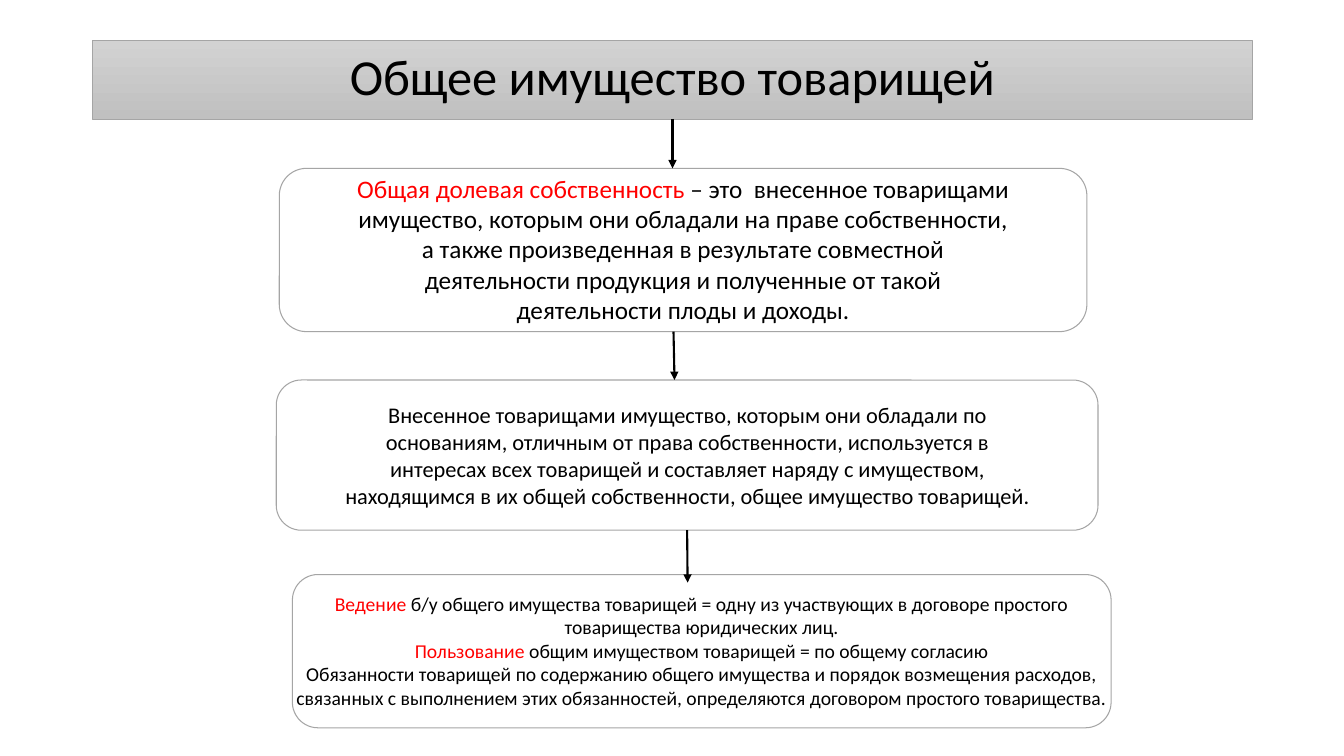
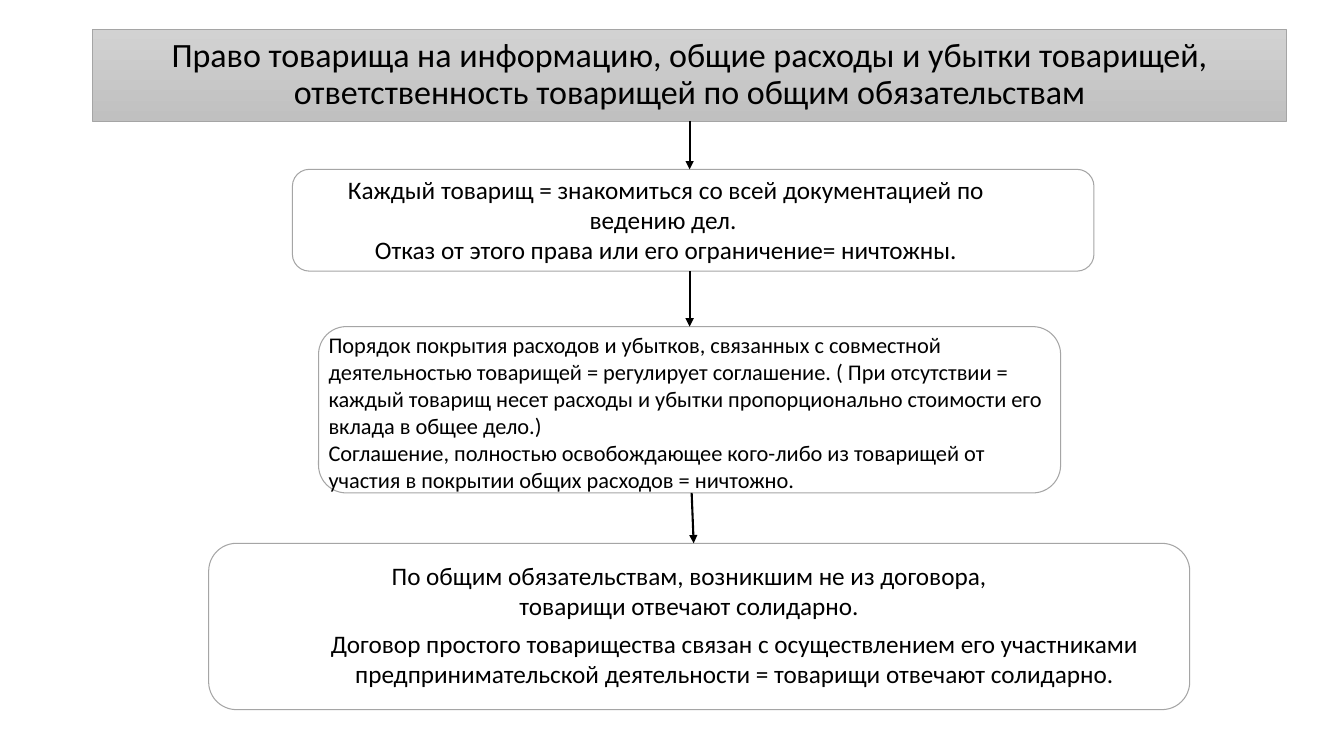
from pptx import Presentation
from pptx import util as u
from pptx.dml.color import RGBColor
from pptx.enum import shapes, text
from pptx.oxml.ns import qn
from lxml import etree

# Content: boxes are left, top, width, height in inches; *red* marks key words
DECK = [
    {
        "title": ("Общее имущество товарищей", 36, (0.92, 0.4, 11.5, 0.78)),
        "frames": [(2.77, 1.67, 8.01, 1.62), (2.74, 3.77, 8.15, 1.49),
                   (2.9, 5.7, 8.12, 1.52)],
        "arrows": [(6.67, 6.67, 1.67), (6.68, 6.69, 3.77), (6.82, 6.82, 5.78)],
        "texts": [
            ((3.44, 1.67, 6.67, 1.62), 18, "CENTER", [
                "*Общая долевая собственность *– это  внесенное товарищами "
                "имущество, которым они обладали на праве собственности, а "
                "также произведенная в результате совместной деятельности "
                "продукция и полученные от такой деятельности плоды и доходы."]),
            ((3.29, 3.93, 7.06, 1.18), 16, "CENTER", [
                "Внесенное товарищами имущество, которым они обладали по "
                "основаниям, отличным от права собственности, используется в "
                "интересах всех товарищей и составляет наряду с имуществом, "
                "находящимся в их общей собственности, общее имущество "
                "товарищей."]),
            ((2.74, 5.82, 8.44, 1.28), 14, "CENTER", [
                "*Ведение* б/у общего имущества товарищей = однy из "
                "участвующих в договоре простого товарищества юридических лиц.",
                "*Пользование* общим имуществом товарищей = по общему согласию",
                "Обязанности товарищей по содержанию общего имущества и "
                "порядок возмещения расходов, связанных с выполнением этих "
                "обязанностей, определяются договором простого "
                "товарищества."]),
        ],
    },
    {
        "title": ("Право товарища на информацию, общие расходы и убытки "
                  "товарищей, ответственность товарищей по общим "
                  "обязательствам", 24.3, (0.92, 0.29, 11.84, 0.91)),
        "frames": [(2.9, 1.68, 7.95, 1.01), (3.16, 3.24, 7.36, 1.65),
                   (2.07, 5.39, 9.73, 1.65)],
        "arrows": [(6.84, 6.84, 1.68), (6.84, 6.84, 3.24), (6.86, 6.88, 5.39)],
        "texts": [
            ((3.27, 1.68, 6.67, 1.01), 18, "CENTER", [
                "Каждый товарищ = знакомиться со всей документацией по "
                "ведению дел. ",
                "Отказ от этого права или его ограничение= ничтожны."]),
            ((3.16, 3.24, 7.39, 1.72), 16, "LEFT", [
                "Порядок покрытия расходов и убытков, связанных с совместной "
                "деятельностью товарищей = регулирует соглашение. ( При "
                "отсутствии = каждый товарищ несет расходы и убытки "
                "пропорционально стоимости его вклада в общее дело.)",
                "Соглашение, полностью освобождающее кого-либо из товарищей "
                "от участия в покрытии общих расходов = ничтожно."]),
            ((3.5, 5.51, 6.67, 0.71), 18, "CENTER", [
                "По общим обязательствам, возникшим не из договора, товарищи "
                "отвечают солидарно."]),
            ((2.9, 6.18, 8.77, 0.71), 18, "CENTER", [
                "Договор простого товарищества связан с осуществлением его "
                "участниками предпринимательской деятельности = товарищи "
                "отвечают солидарно."]),
        ],
    },
]

# Shared look
FONT, INK, RED, GREY = "Calibri", "000000", "FF0000", "A5A5A5"
BAND = ("D2D2D2", "C0C0C0")
NEAR = u.Inches(0.01)


def rgb(code):
    return RGBColor.from_string(code)


def stroke(shape, color, width):
    shape.line.color.rgb = rgb(color)
    shape.line.width = u.Pt(width)


def write(par, line, size, align):
    par.alignment = getattr(text.PP_ALIGN, align)
    for i, part in enumerate(line.split("*")):
        if part:
            run = par.add_run()
            run.text = part
            for key, val in {"name": FONT, "size": u.Pt(size)}.items():
                setattr(run.font, key, val)
            run.font.color.rgb = rgb(RED if i % 2 else INK)


def add_title(slide, line, size, box):
    band = slide.shapes.title
    for key, val in zip(("left", "top", "width", "height"), box):
        setattr(band, key, u.Inches(val))
    band.fill.gradient()
    band.fill.gradient_angle = 270
    for stop, code in zip(band.fill.gradient_stops, BAND):
        stop.color.rgb = rgb(code)
    stroke(band, GREY, 0.5)
    frame = band.text_frame
    frame.auto_size = text.MSO_AUTO_SIZE.NONE
    frame.vertical_anchor = text.MSO_ANCHOR.MIDDLE
    frame.paragraphs[0].line_spacing = 0.9
    write(frame.paragraphs[0], line, size, "CENTER")
    return band


def add_frame(slide, box):
    frame = slide.shapes.add_shape(shapes.MSO_SHAPE.ROUNDED_RECTANGLE,
                                   *map(u.Inches, box))
    frame.shadow.inherit = False
    frame.fill.background()
    stroke(frame, GREY, 0.75)
    return frame


def add_text(slide, box, size, align, lines):
    frame = slide.shapes.add_textbox(*map(u.Inches, box)).text_frame
    frame.word_wrap = True
    frame.auto_size = text.MSO_AUTO_SIZE.SHAPE_TO_FIT_TEXT
    for i, line in enumerate(lines):
        par = frame.add_paragraph() if i else frame.paragraphs[0]
        write(par, line, size, align)


def add_arrow(slide, upper, lower, x1, x2, end):
    x1, x2, end = map(u.Inches, (x1, x2, end))
    start = upper.top + upper.height
    arrow = slide.shapes.add_connector(shapes.MSO_CONNECTOR.STRAIGHT,
                                       x1, start, x2, end)
    # Join only the ends that meet the middle of a side
    if abs(upper.left + upper.width / 2 - x1) <= NEAR:
        arrow.begin_connect(upper, 2)
    if (abs(lower.left + lower.width / 2 - x2) <= NEAR
            and abs(lower.top - end) <= NEAR):
        arrow.end_connect(lower, 0)
    stroke(arrow, INK, 1.5)
    etree.SubElement(arrow.line._get_or_add_ln(), qn("a:tailEnd"),
                     type="triangle")
    etree.SubElement(arrow._element.spPr, qn("a:effectLst"))


def main():
    deck = Presentation()
    deck.slide_width, deck.slide_height = u.Inches(13.33), u.Inches(7.5)
    for page in DECK:
        slide = deck.slides.add_slide(deck.slide_layouts[5])
        chain = [add_title(slide, *page["title"])]
        chain += [add_frame(slide, box) for box in page["frames"]]
        for upper, lower, ends in zip(chain, chain[1:], page["arrows"]):
            add_arrow(slide, upper, lower, *ends)
        for item in page["texts"]:
            add_text(slide, *item)
    deck.save("out.pptx")


if __name__ == "__main__":
    main()
